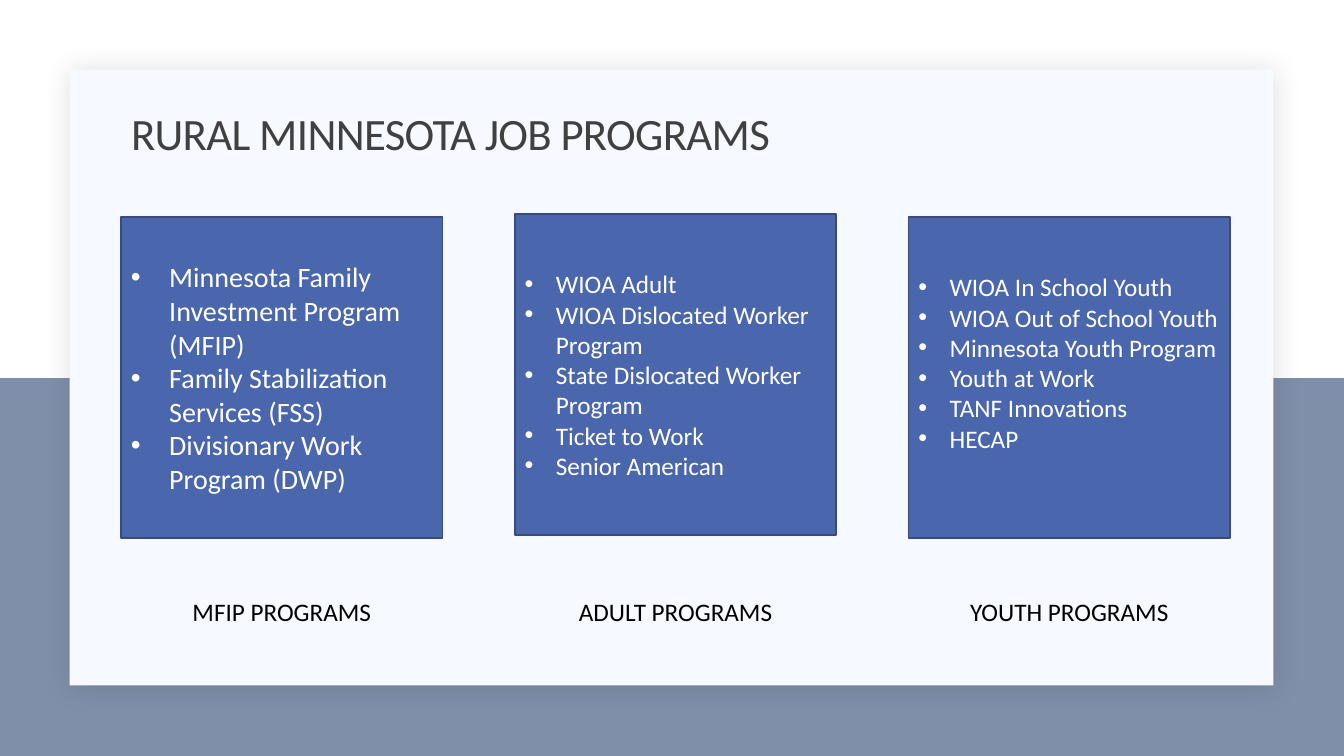
from lxml import etree
from pptx import Presentation
from pptx.dml.color import RGBColor
from pptx.enum.shapes import MSO_SHAPE
from pptx.enum.text import MSO_ANCHOR, PP_ALIGN
from pptx.oxml.ns import qn
from pptx.util import Inches, Pt

RECTANGLE = MSO_SHAPE.RECTANGLE
MIDDLE = MSO_ANCHOR.MIDDLE
LEFT, CENTER = PP_ALIGN.LEFT, PP_ALIGN.CENTER

WHITE = RGBColor(0xFF, 0xFF, 0xFF)
BLACK = RGBColor(0, 0, 0)
GRAY = RGBColor(0x40, 0x40, 0x40)
SLATE = RGBColor(0x7F, 0x8F, 0xA9)
PALE = RGBColor(0xF6, 0xF9, 0xFF)
BLUE = RGBColor(0x4A, 0x66, 0xAC)
NAVY = RGBColor(0x37, 0x4B, 0x7F)

TITLE = "RURAL MINNESOTA JOB PROGRAMS"
GROUPS = [
    {"label": "MFIP PROGRAMS", "top": 2.15, "size": 20, "indent": 0.38, "bottom": 0.05,
     "programs": ["Minnesota Family Investment Program (MFIP)",
                  "Family Stabilization Services (FSS)",
                  "Divisionary Work Program (DWP)"]},
    {"label": "ADULT PROGRAMS", "top": 2.12, "size": 18, "indent": 0.31, "bottom": 0.05,
     "programs": ["WIOA Adult", "WIOA Dislocated Worker Program",
                  "State Dislocated Worker Program", "Ticket to Work",
                  "Senior American"]},
    {"label": "YOUTH PROGRAMS", "top": 2.15, "size": 18, "indent": 0.31, "bottom": 0.35,
     "programs": ["WIOA In School Youth", "WIOA Out of School Youth",
                  "Minnesota Youth Program", "Youth at Work",
                  "TANF Innovations", "HECAP"]},
]
FIRST_LEFT, STEP, SIDE = 1.2, 3.905, 3.19
LABEL_TOP, LABEL_HEIGHT = 5.75, 0.64


def add_panel(page, area, fill, line=None):
    panel = page.shapes.add_shape(RECTANGLE, *map(Inches, area))
    panel.shadow.inherit = False
    panel.fill.solid()
    panel.fill.fore_color.rgb = fill
    if line is None:
        panel.line.fill.background()
    else:
        panel.line.color.rgb = line
        panel.line.width = Pt(1.25)
    return panel


def add_soft_shadow(panel):
    effects = panel._element.spPr.find(qn("a:effectLst"))
    shadow = etree.SubElement(effects, qn("a:outerShdw"), blurRad=str(Pt(20)),
                              dist=str(Pt(2)), dir=str(45 * 60000), algn="ctr", rotWithShape="0")
    color = etree.SubElement(shadow, qn("a:srgbClr"), val="1F2125")
    etree.SubElement(color, qn("a:alpha"), val="15000")


def write(shape, lines, size, color, align, bottom=0.05):
    frame = shape.text_frame
    settings = {"word_wrap": True, "vertical_anchor": MIDDLE,
                "margin_left": Inches(0.1), "margin_right": Inches(0.1),
                "margin_top": Inches(0.05), "margin_bottom": Inches(bottom)}
    for name, value in settings.items():
        setattr(frame, name, value)
    frame.text = "\n".join(lines)
    for para in frame.paragraphs:
        para.alignment = align
        for span in para.runs:
            for name, value in {"name": "Calibri", "size": Pt(size), "bold": False}.items():
                setattr(span.font, name, value)
            span.font.color.rgb = color
    return frame.paragraphs


def add_bullet(para, indent):
    properties = para._p.get_or_add_pPr()
    properties.set("marL", str(Inches(indent)))
    properties.set("indent", str(-Inches(indent)))
    etree.SubElement(properties, qn("a:buFont"), typeface="Arial")
    etree.SubElement(properties, qn("a:buChar"), char="•")


def add_title(page):
    title = page.shapes.title
    page.shapes._spTree.append(title._element)
    for name, value in zip(("left", "top", "width", "height"), (1.2, 1.03, 11, 0.64)):
        setattr(title, name, Inches(value))
    para = write(title, [TITLE], 32, GRAY, LEFT)[0]
    para.line_spacing = 0.9
    para.runs[0].font._element.set("spc", "-50")


def add_group(page, left, group):
    panel = add_panel(page, (left, group["top"], SIDE, SIDE), BLUE, NAVY)
    for para in write(panel, group["programs"], group["size"], WHITE, LEFT, group["bottom"]):
        add_bullet(para, group["indent"])
    label = page.shapes.add_textbox(*map(Inches, (left, LABEL_TOP, SIDE, LABEL_HEIGHT)))
    write(label, [group["label"]], 18, BLACK, CENTER)


def main():
    deck = Presentation()
    deck.slide_width, deck.slide_height = Inches(13.33), Inches(7.5)
    page = deck.slides.add_slide(deck.slide_layouts[5])
    page.background.fill.solid()
    page.background.fill.fore_color.rgb = WHITE
    add_panel(page, (0, 3.75, 13.33, 3.75), SLATE)
    add_soft_shadow(add_panel(page, (0.69, 0.69, 11.94, 6.11), PALE))
    add_title(page)
    for index, group in enumerate(GROUPS):
        add_group(page, FIRST_LEFT + index * STEP, group)
    deck.save("out.pptx")


if __name__ == "__main__":
    main()
